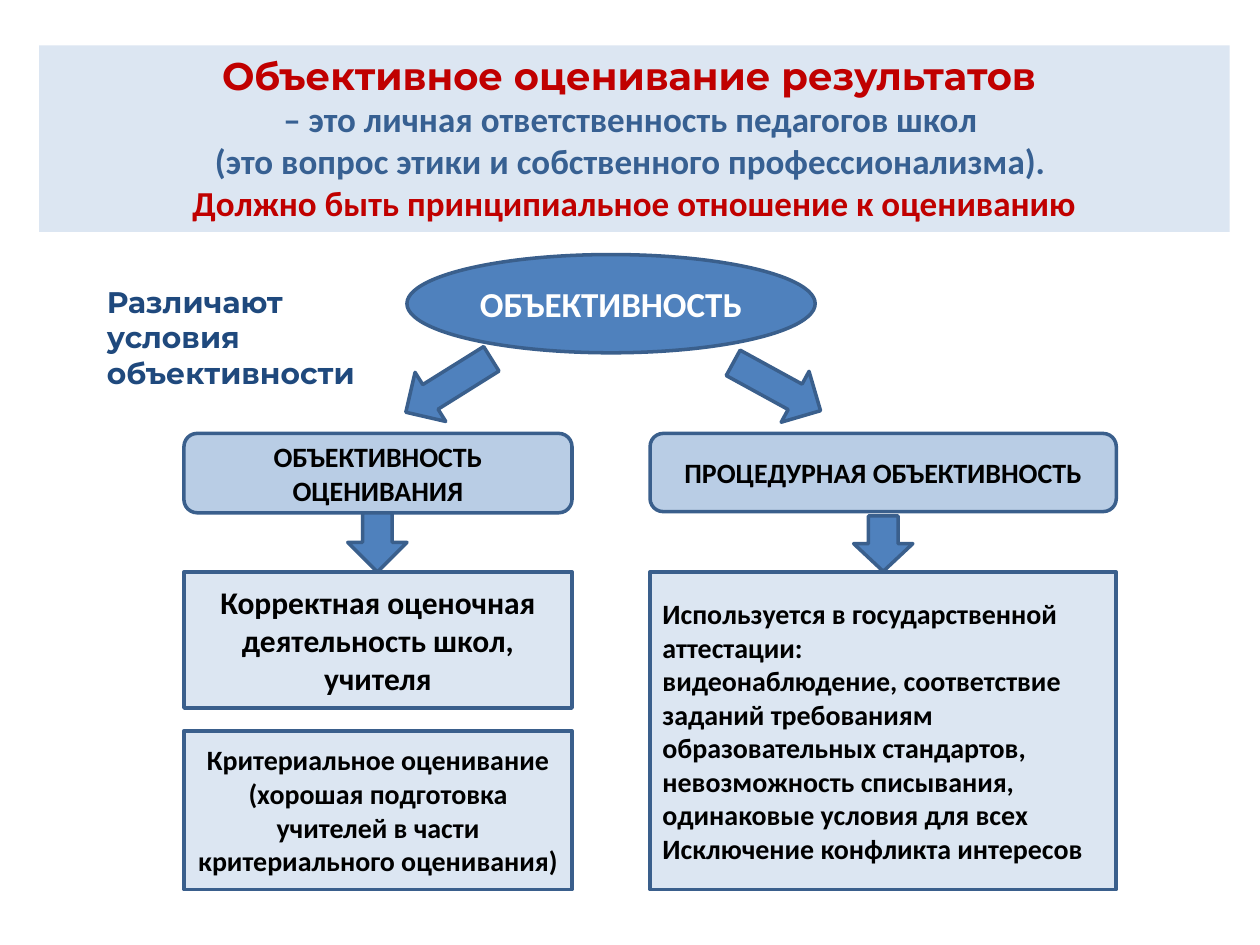
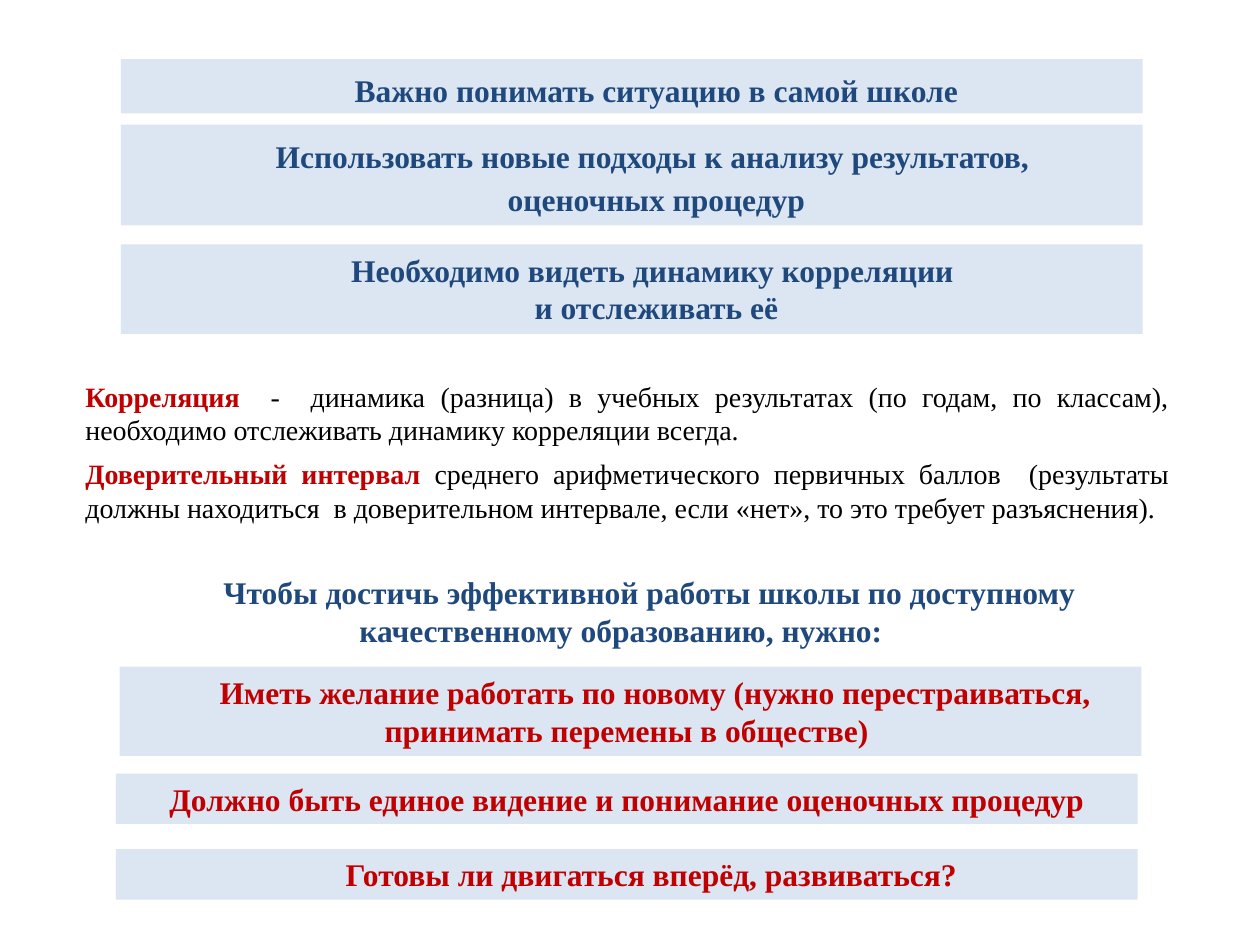
from pptx import Presentation
from pptx.dml.color import RGBColor
from pptx.enum import shapes, text
from pptx.util import Inches, Pt

NAVY, STEEL, RED, BLACK, WHITE = "1F497D", "376092", "C00000", "000000", "FFFFFF"
PALE, LIGHT, BLUE, EDGE = "DCE6F2", "B9CDE5", "4F81BD", "3A5F8C"
SANS, HEAD, SERIF = "Calibri", "Montserrat", "Times New Roman"
KIND = shapes.MSO_SHAPE
CENTER, LEFT, JUSTIFY = text.PP_ALIGN.CENTER, text.PP_ALIGN.LEFT, text.PP_ALIGN.JUSTIFY


def rgb(value):
    return RGBColor.from_string(value)


def add_box(s, at, paras, kind=KIND.RECTANGLE, fill=None, line=None, middle=False,
            align=CENTER, indent=0, after=0, spacing=None):
    """Add a shape; paras is a list of lists of runs (text, size, font, colour, bold)."""
    sp = s.shapes.add_shape(kind, *[Inches(v) for v in at])
    sp.shadow.inherit = False
    if fill:
        sp.fill.solid()
        sp.fill.fore_color.rgb = rgb(fill)
    else:
        sp.fill.background()
    if line:
        sp.line.color.rgb = rgb(line)
        sp.line.width = Pt(2)
    else:
        sp.line.fill.background()
    tf = sp.text_frame
    tf.word_wrap = True
    tf.vertical_anchor = text.MSO_ANCHOR.MIDDLE if middle else text.MSO_ANCHOR.TOP
    if not middle:
        tf.auto_size = text.MSO_AUTO_SIZE.SHAPE_TO_FIT_TEXT
    for i, runs in enumerate(paras):
        p = tf.paragraphs[0] if i == 0 else tf.add_paragraph()
        p.alignment = align
        p.space_after = Pt(after)
        if spacing:
            p.line_spacing = spacing
        if indent:
            pPr = p._p.get_or_add_pPr()
            pPr.set("marL", "0")
            pPr.set("indent", str(Inches(indent)))
        for words, size, font, colour, bold in runs:
            r = p.add_run()
            r.text = words
            r.font.size = Pt(size)
            r.font.name = font
            r.font.color.rgb = rgb(colour)
            r.font.bold = bold
    return sp


prs = Presentation()
prs.slide_width, prs.slide_height = Inches(10), Inches(7.5)
blank = prs.slide_layouts[6]

# Slide 1: conditions of objectivity
s = prs.slides.add_slide(blank)
add_box(s, (0.31, 0.36, 9.45, 1.48), [
    [("Объективное оценивание результатов ", 22, HEAD, RED, True)],
    [("– это личная ответственность педагогов школ ", 20, SANS, STEEL, True)],
    [("(это вопрос этики и собственного профессионализма). ", 20, SANS, STEEL, True)],
    [("Должно быть принципиальное отношение к оцениванию", 20, SANS, RED, True)],
], fill=PALE)
add_box(s, (3.23, 2.02, 3.24, 0.78), [[("ОБЪЕКТИВНОСТЬ", 20, SANS, WHITE, True)]],
        KIND.OVAL, BLUE, EDGE, middle=True)

left_col, right_col = (1.46, 3.08), (5.16, 3.7)
procedure = [
    "Используется в государственной аттестации:",
    "видеонаблюдение, соответствие заданий требованиям образовательных стандартов, "
    "невозможность списывания, одинаковые условия для всех",
    "Исключение конфликта интересов",
]
for (x, w), y, h, kind, fill, size, align, lines in [
    (left_col, 3.44, 0.63, KIND.ROUNDED_RECTANGLE, LIGHT, 16, CENTER,
     ["ОБЪЕКТИВНОСТЬ ОЦЕНИВАНИЯ"]),
    (right_col, 3.44, 0.62, KIND.ROUNDED_RECTANGLE, LIGHT, 16, CENTER,
     ["ПРОЦЕДУРНАЯ ОБЪЕКТИВНОСТЬ"]),
    (left_col, 4.54, 1.08, KIND.RECTANGLE, PALE, 18, CENTER,
     ["Корректная оценочная деятельность школ, учителя"]),
    (left_col, 5.8, 1.26, KIND.RECTANGLE, PALE, 16, CENTER,
     ["Критериальное оценивание (хорошая подготовка учителей в части "
      "критериального оценивания)"]),
    (right_col, 4.54, 2.52, KIND.RECTANGLE, PALE, 16, LEFT, procedure),
]:
    add_box(s, (x, y, w, h), [[(words, size, SANS, BLACK, True)] for words in lines],
            kind, fill, EDGE, middle=True, align=align)

for at, angle in [
    ((5.77, 2.84, 0.79, 0.46), 28.7),
    ((2.76, 4.07, 0.47, 0.47), 90),
    ((6.79, 4.08, 0.44, 0.47), 90),
    ((3.16, 2.83, 0.8, 0.46), 148),
]:
    arrow = add_box(s, at, [], KIND.RIGHT_ARROW, BLUE, EDGE, middle=True)
    arrow.rotation = angle

add_box(s, (0.75, 2.2, 2.25, 0.96),
        [[("Различают условия объективности", 17, HEAD, NAVY, True)]], align=LEFT)

# Slide 2: what a school has to do
s = prs.slides.add_slide(blank)
band_w, first_line = 8.11, 0.39
for x, y, h, w, fill, colour, indent, after, spacing, lines in [
    (0.96, 0.47, 0.43, band_w, PALE, NAVY, first_line, 0, 1.15,
     ["Важно понимать ситуацию в самой школе"]),
    (0.96, 0.99, 0.8, band_w, PALE, NAVY, first_line, 0, 1.15,
     ["Использовать новые подходы к анализу результатов, ", "оценочных процедур"]),
    (0.96, 1.94, 0.71, band_w, PALE, NAVY, first_line, 0, None,
     ["Необходимо видеть динамику корреляции ", "и отслеживать её"]),
    (0.63, 4.5, 0.71, 8.66, None, NAVY, first_line, 6, None,
     ["Чтобы достичь эффективной работы школы по доступному качественному "
      "образованию, нужно: "]),
    (0.95, 5.29, 0.71, band_w, PALE, RED, first_line, 6, None,
     ["Иметь желание работать по новому (нужно перестраиваться, принимать "
      "перемены в обществе) "]),
    (0.92, 6.14, 0.4, band_w, PALE, RED, 0, 0, None,
     ["Должно быть единое видение и понимание оценочных процедур"]),
    (0.92, 6.74, 0.4, band_w, PALE, RED, first_line, 6, None,
     ["Готовы ли двигаться вперёд, развиваться?"]),
]:
    add_box(s, (x, y, w, h), [[(words, 18, SERIF, colour, True)] for words in lines],
            fill=fill, indent=indent, after=after, spacing=spacing)

definitions = [
    ("Корреляция ",
     " -  динамика (разница) в учебных результатах (по годам, по классам), "
     "необходимо отслеживать динамику корреляции всегда."),
    ("Доверительный интервал ",
     "среднего арифметического первичных баллов  (результаты должны находиться  в "
     "доверительном интервале, если «нет», то это требует разъяснения)."),
]
add_box(s, (0.58, 2.96, 8.8, 1.26),
        [[(term, 16, SERIF, RED, True), (meaning, 16, SERIF, BLACK, False)]
         for term, meaning in definitions], align=JUSTIFY, after=6)

prs.save("out.pptx")
